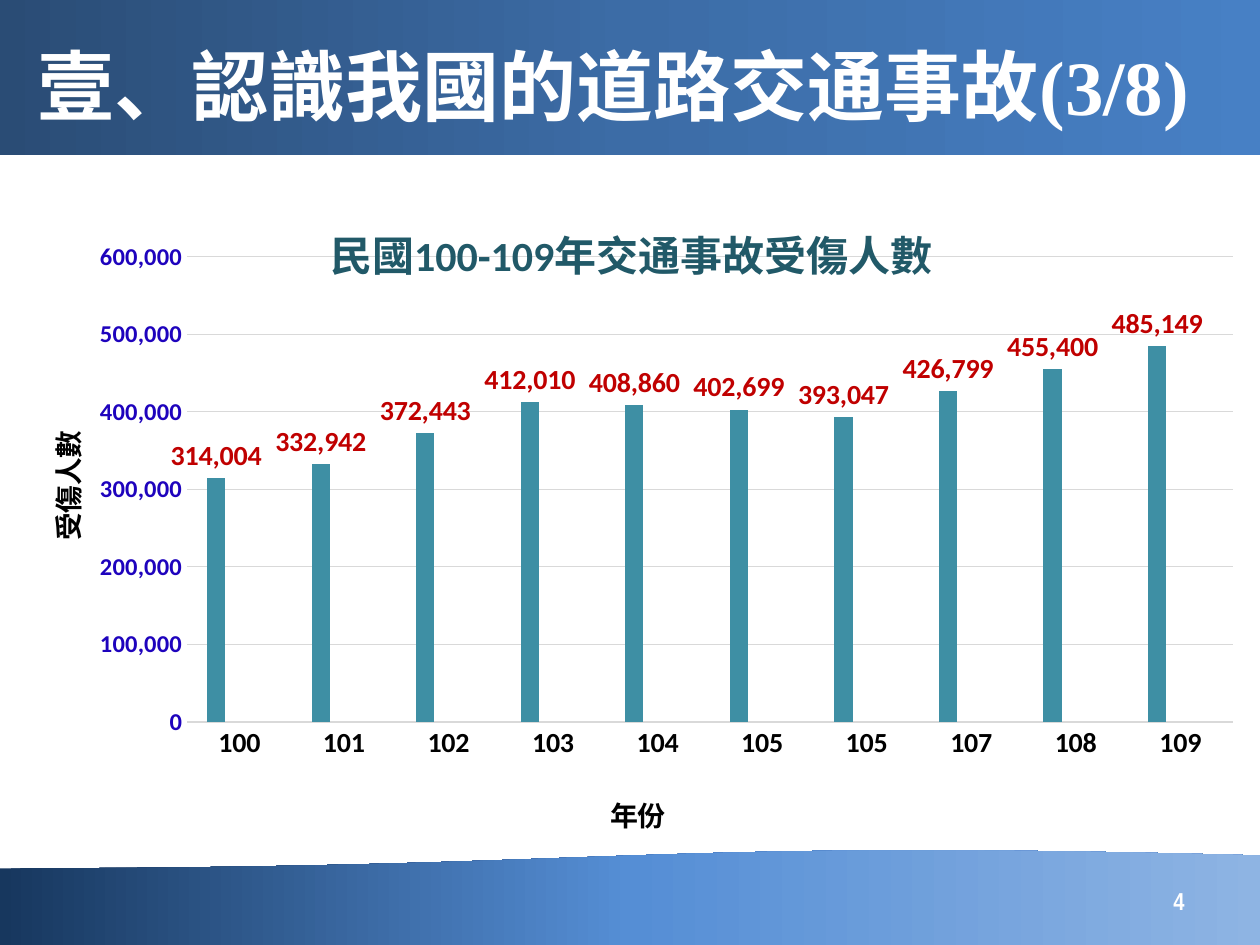
"""Build the slide on people injured in road accidents, years 100 to 109."""
import copy
import dataclasses
import typing

import lxml.etree
import pptx
import pptx.chart.data
import pptx.dml.color
import pptx.enum.chart
import pptx.enum.shapes
import pptx.enum.text
import pptx.oxml.ns
import pptx.util

EMU_PER_PX = 914400 / 126
qn = pptx.oxml.ns.qn


@dataclasses.dataclass(frozen=True)
class Theme:
    """Colours, fonts and type sizes of the slide."""
    white: str = "FFFFFF"
    black: str = "000000"
    heading: str = "215968"
    value_tick: str = "1E03BD"
    label: str = "C00000"
    grid: str = "D9D9D9"
    series: tuple[str, ...] = ("3E8FA4", "4BACC6", "A9CEDC")
    header: tuple[str, ...] = ("2A4C75", "3C6CA6", "4780C5")
    footer: tuple[str, ...] = ("17375E", "558ED5", "8EB4E3")
    cjk: str = "Noto Sans CJK SC"
    serif: str = "Times New Roman"
    narrow: str = "Arial Narrow"
    sans: str = "Calibri"
    title_size: int = 44
    heading_size: int = 24
    chart_size: int = 16
    small_size: int = 14


@dataclasses.dataclass(frozen=True)
class Band:
    """A gradient band across the slide."""
    kind: pptx.enum.shapes.MSO_SHAPE
    top: int
    height: int
    colors: tuple[str, ...]
    rotation: int


@dataclasses.dataclass(frozen=True)
class ChartHeading:
    """A chart or axis title with its place as shares of the chart."""
    text: str
    x: float
    y: float
    size: int
    color: str


THEME = Theme()
BANDS = (
    Band(pptx.enum.shapes.MSO_SHAPE.FLOWCHART_DOCUMENT, 849, 97, THEME.footer, 180),
    Band(pptx.enum.shapes.MSO_SHAPE.RECTANGLE, 0, 155, THEME.header, 0),
)
CHART_TITLE = ChartHeading("民國100-109年交通事故受傷人數", 0.25, 0.05,
                           THEME.heading_size, THEME.heading)
YEAR_TITLE = ChartHeading("年份", 0.48, 0.93, THEME.chart_size, THEME.black)
INJURED_TITLE = ChartHeading("受傷人數", 0.02, 0.38, THEME.chart_size, THEME.black)
YEARS = ("100", "101", "102", "103", "104", "105", "105", "107", "108", "109")
INJURED = (314004, 332942, 372443, 412010, 408860,
           402699, 393047, 426799, 455400, 485149)


def px(length: int) -> int:
    """Turn pixels into EMU."""
    return round(length * EMU_PER_PX)


def rgb(color: str) -> pptx.dml.color.RGBColor:
    """Turn a hex string into a colour."""
    return pptx.dml.color.RGBColor.from_string(color)


def style_font(font: typing.Any, size: int, color: str,
               name: str | None = None, bold: bool = True) -> None:
    """Set size, colour, weight and typeface of a font."""
    font.size, font.bold = pptx.util.Pt(size), bold
    font.color.rgb = rgb(color)
    if name:
        font.name = name


def draw_band(slide: typing.Any, band: Band) -> None:
    """Draw a full-width band with a three-stop gradient."""
    shape = slide.shapes.add_shape(band.kind, 0, px(band.top), px(1260), px(band.height))
    shape.shadow.inherit = False
    shape.rotation = band.rotation
    shape.line.fill.background()
    shape.fill.gradient()
    shape.fill.gradient_angle = band.rotation
    first_stop = shape.fill.gradient_stops[0]
    stop_list = shape.element.spPr.find(".//" + qn("a:gsLst"))
    stop_list.insert(1, copy.deepcopy(stop_list[0]))
    for stop, color, position in zip(shape.fill.gradient_stops, band.colors, (0, 0.5, 1)):
        stop.color.rgb = rgb(color)
        stop.position = position


def write_title(title: typing.Any) -> None:
    """Place and fill the slide title in front of the header band."""
    title.element.getparent().append(title.element)
    title.left, title.top, title.width, title.height = map(px, (25, 26, 1221, 117))
    frame = title.text_frame
    frame.vertical_anchor = pptx.enum.text.MSO_ANCHOR.MIDDLE
    frame.auto_size = pptx.enum.text.MSO_AUTO_SIZE.NONE
    paragraph = frame.paragraphs[0]
    paragraph.alignment = pptx.enum.text.PP_ALIGN.LEFT
    style_font(paragraph.font, THEME.title_size, THEME.white)
    for text, face in (("壹、認識我國的道路交通事故", THEME.cjk), ("(3/8)", THEME.serif)):
        run = paragraph.add_run()
        run.text, run.font.name = text, face
        east_asian = lxml.etree.SubElement(run.font._element, qn("a:ea"))
        east_asian.set("typeface", THEME.cjk)


def write_page_number(slide: typing.Any) -> None:
    """Write the page number on the footer band."""
    page = slide.shapes.add_textbox(*map(px, (903, 876, 294, 50))).text_frame
    page.word_wrap = True
    page.vertical_anchor = pptx.enum.text.MSO_ANCHOR.MIDDLE
    paragraph = page.paragraphs[0]
    paragraph.text = "4"
    paragraph.alignment = pptx.enum.text.PP_ALIGN.RIGHT
    style_font(paragraph.font, THEME.small_size, THEME.white, THEME.narrow)


def set_layout(parent: typing.Any, index: int, **settings: str | float) -> None:
    """Give a chart part a manual layout."""
    for old in parent.findall(qn("c:layout")):
        parent.remove(old)
    layout = lxml.etree.Element(qn("c:layout"))
    manual = lxml.etree.SubElement(layout, qn("c:manualLayout"))
    for tag, value in settings.items():
        lxml.etree.SubElement(manual, qn(f"c:{tag}")).set("val", str(value))
    parent.insert(index, layout)


def write_heading(title: typing.Any, heading: ChartHeading) -> None:
    """Write and place a chart or axis title."""
    paragraph = title.text_frame.paragraphs[0]
    paragraph.add_run().text = heading.text
    style_font(paragraph.font, heading.size, heading.color, THEME.sans)
    set_layout(title._element, 1, xMode="edge", yMode="edge", x=heading.x, y=heading.y)


def style_axis(axis: typing.Any, heading: ChartHeading, size: int, color: str) -> None:
    """Style the tick labels and title of an axis."""
    axis.major_tick_mark = axis.minor_tick_mark = pptx.enum.chart.XL_TICK_MARK.NONE
    style_font(axis.tick_labels.font, size, color, THEME.sans)
    write_heading(axis.axis_title, heading)


def draw_chart(slide: typing.Any) -> None:
    """Draw the column chart of injured people by year."""
    data = pptx.chart.data.CategoryChartData(number_format="#,##0")
    data.categories = YEARS
    blank = (None,) * len(YEARS)
    for number, values in enumerate((INJURED, blank, blank), 1):
        data.add_series(f"Series {number}", values)
    chart = slide.shapes.add_chart(pptx.enum.chart.XL_CHART_TYPE.COLUMN_CLUSTERED,
                                   *map(px, (15, 178, 1230, 665)), data).chart
    style_font(chart.font, 10, THEME.black, THEME.sans, bold=False)
    chart.has_legend = False
    write_heading(chart.chart_title, CHART_TITLE)
    chart.chart_title.include_in_layout = False
    plot = chart.plots[0]
    plot.gap_width, plot.overlap, plot.vary_by_categories = 219, -27, False
    for series, color in zip(plot.series, THEME.series):
        series.format.fill.solid()
        series.format.fill.fore_color.rgb = rgb(color)
    labels = plot.series[0].data_labels
    labels.show_value = True
    labels.position = pptx.enum.chart.XL_LABEL_POSITION.OUTSIDE_END
    style_font(labels.font, THEME.chart_size, THEME.label, THEME.sans)
    years, injured = chart.category_axis, chart.value_axis
    style_axis(years, YEAR_TITLE, THEME.chart_size, THEME.black)
    style_axis(injured, INJURED_TITLE, THEME.small_size, THEME.value_tick)
    turned = injured.axis_title._element.find(".//" + qn("a:bodyPr"))
    turned.set("rot", "-5400000")
    turned.set("vert", "horz")
    injured.minimum_scale, injured.maximum_scale, injured.major_unit = 0, 600000, 100000
    injured.tick_labels.number_format = "#,##0"
    injured.tick_labels.number_format_is_linked = False
    injured.format.line.fill.background()
    for line in (years.format.line, injured.major_gridlines.format.line):
        line.color.rgb, line.width = rgb(THEME.grid), pptx.util.Pt(0.75)
    set_layout(chart._chartSpace.find(".//" + qn("c:plotArea")), 0, layoutTarget="inner",
               xMode="edge", yMode="edge", x=0.14, y=0.12, w=0.85, h=0.71)


def main() -> None:
    """Build and save the presentation."""
    deck = pptx.Presentation()
    deck.slide_width, deck.slide_height = px(1260), px(945)
    slide = deck.slides.add_slide(deck.slide_layouts[5])
    for band in BANDS:
        draw_band(slide, band)
    write_title(slide.shapes.title)
    write_page_number(slide)
    draw_chart(slide)
    deck.save("out.pptx")


if __name__ == "__main__":
    main()
